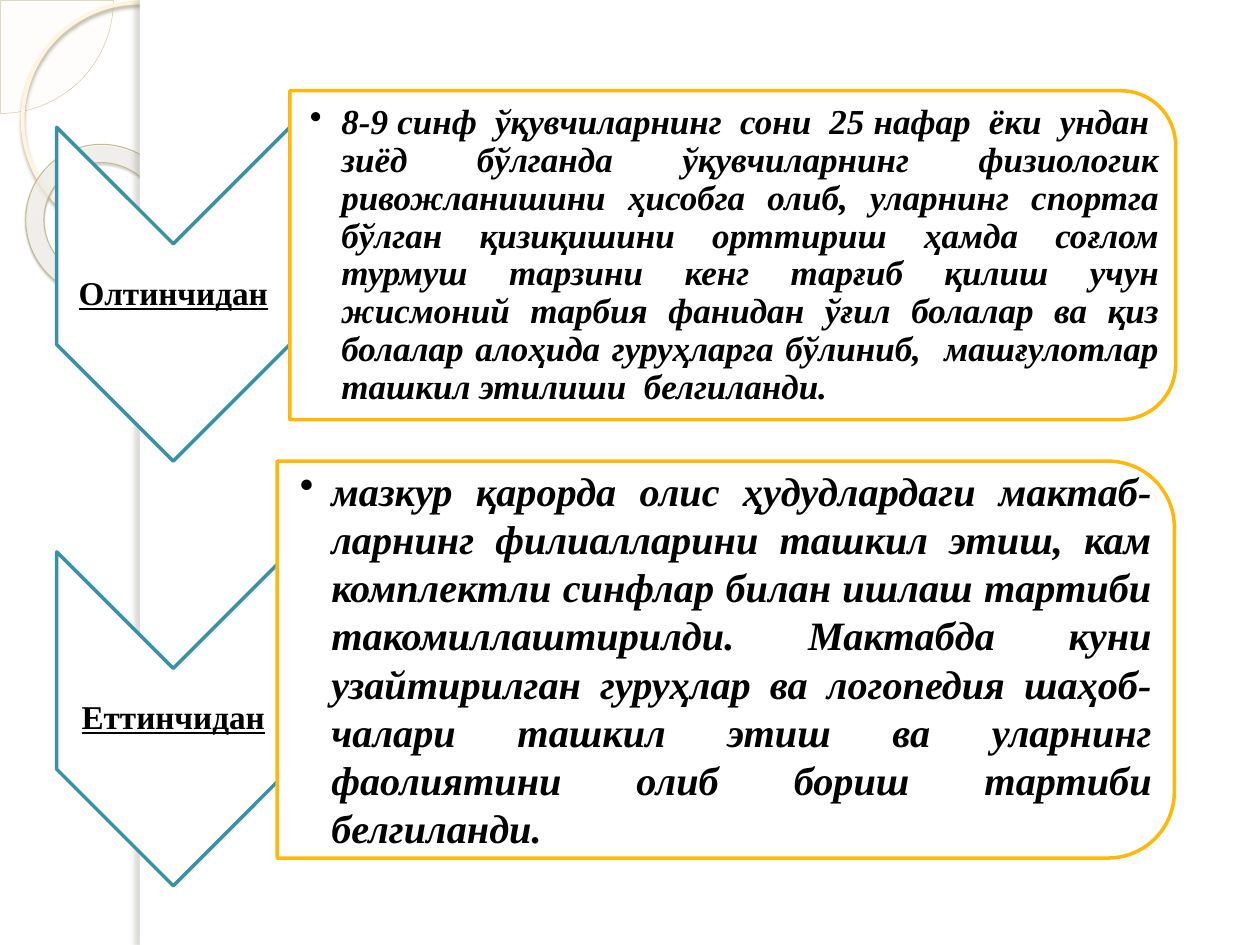
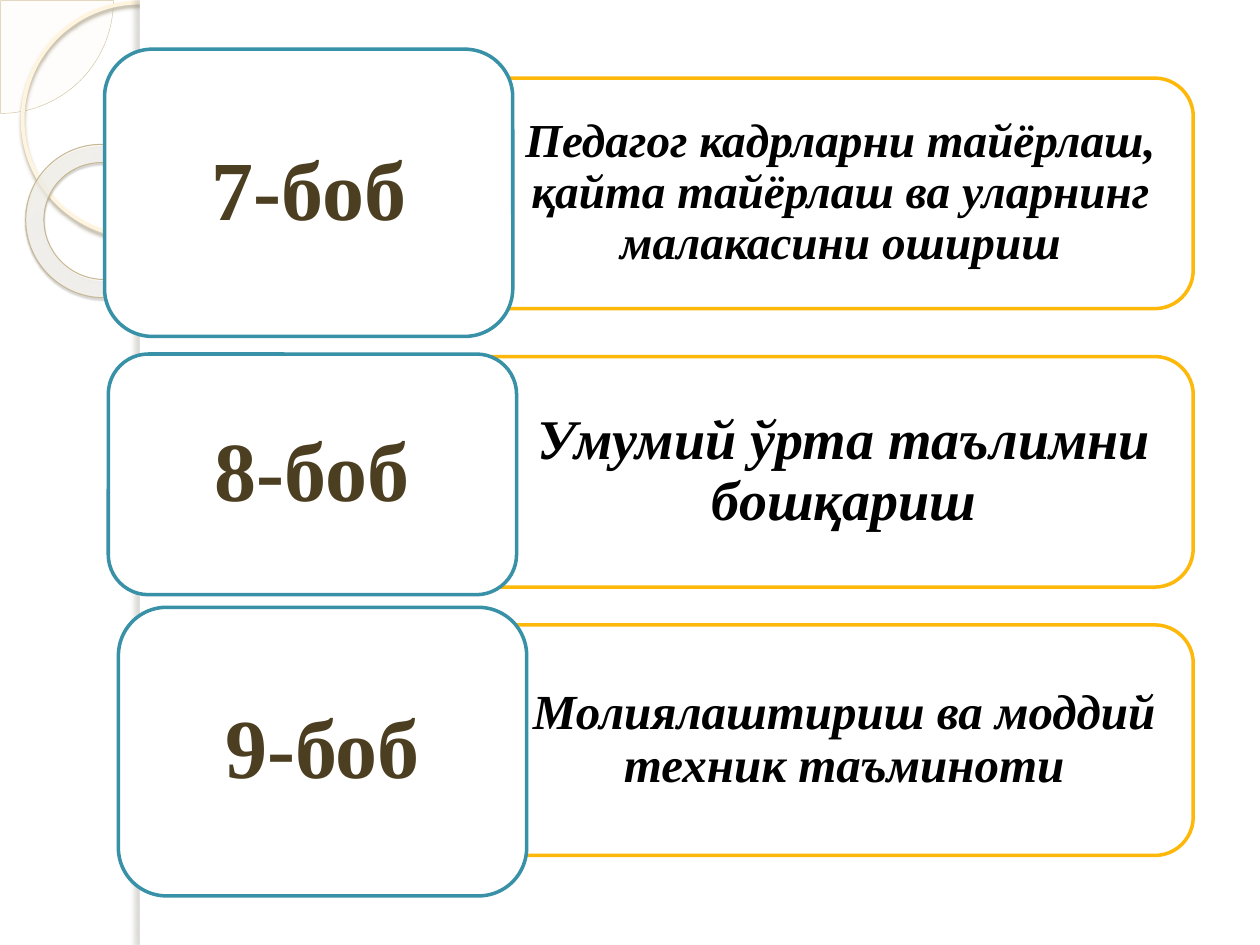
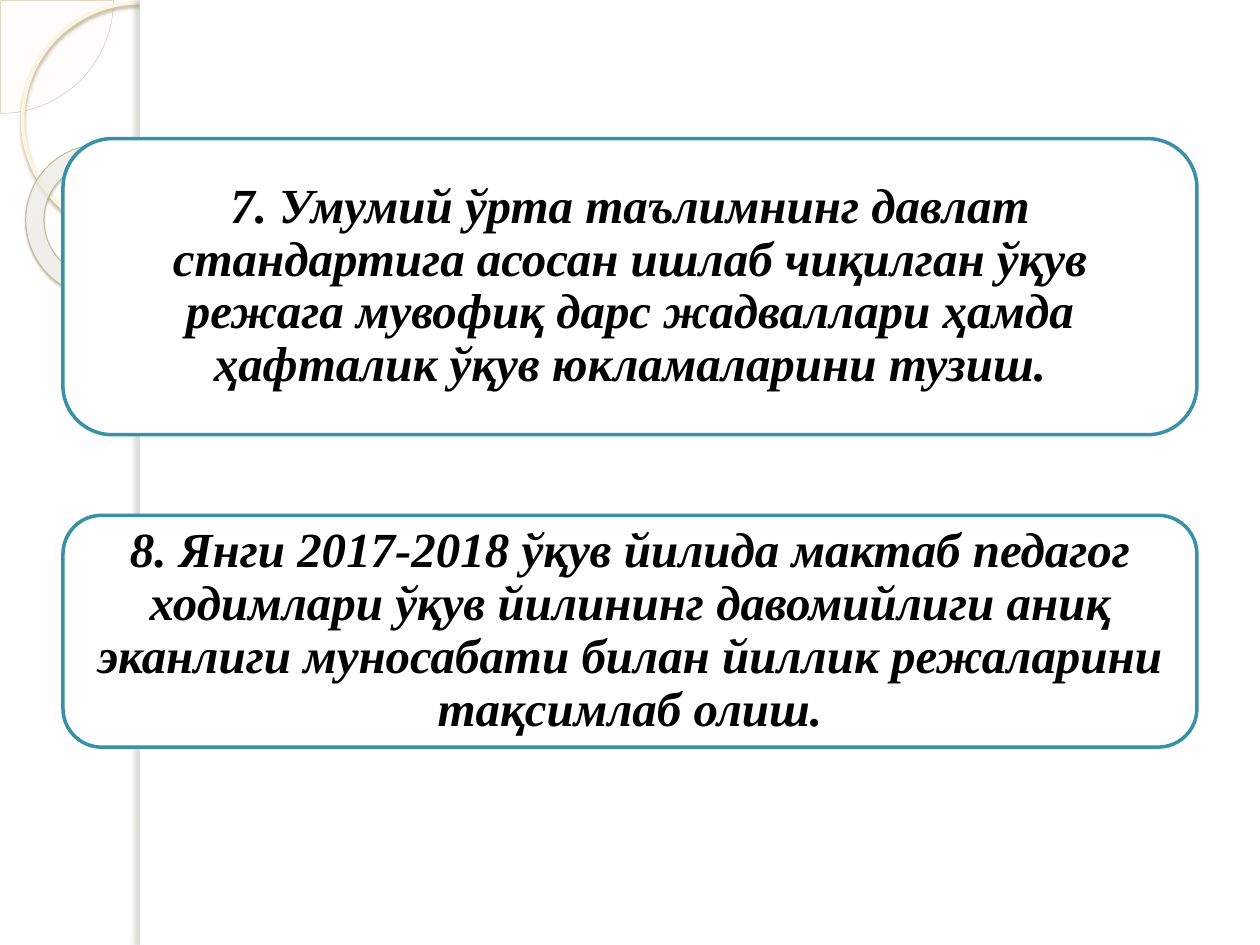
from lxml import etree
from pptx import Presentation
from pptx import util as u
from pptx.dml.color import RGBColor
from pptx.enum import shapes, text
from pptx.oxml import parse_xml
from pptx.oxml.ns import nsdecls, qn

FONT = "Times New Roman"
COLUMNS, ROWS = 100, 75
CELL = u.Inches(0.1)
WHITE, BLACK, BROWN = "FFFFFF", "000000", "4B3E21"
TEAL, AMBER = "3891A7", "FEB80A"
FORM = shapes.MSO_SHAPE
CENTER, JUSTIFY = text.PP_ALIGN.CENTER, text.PP_ALIGN.JUSTIFY


def color(code):
    """Turn a hex string into a colour."""
    return RGBColor.from_string(code)


def grid(*lengths):
    """Turn grid cells into slide lengths."""
    return [round(length * CELL) for length in lengths]


def add_form(page, form, area, fill=None, line=None, width=2, turn=0):
    """Add a preset shape with a flat fill and outline."""
    shape = page.shapes.add_shape(form, *grid(*area))
    shape.rotation = turn
    shape.shadow.inherit = False
    if fill:
        shape.fill.solid()
        shape.fill.fore_color.rgb = color(fill)
    else:
        shape.fill.background()
    if line:
        shape.line.color.rgb = color(line)
        shape.line.width = u.Pt(width)
    else:
        shape.line.fill.background()
    return shape


def add_upright(page, form, area, line):
    """Add a shape turned a quarter so that it covers the given area."""
    left, top, width, height = area
    shift = (width - height) / 2
    frame = (left + shift, top - shift, height, width)
    return add_form(page, form, frame, WHITE, line, turn=90)


def write(box, words, size, ink=BLACK, align=CENTER, italic=True, underline=False,
          spacing=0.9, insets=(0, 0), indent=0, bullet=False):
    """Write one formatted paragraph into a shape or text box."""
    frame = box.text_frame
    frame.word_wrap = True
    frame.vertical_anchor = text.MSO_ANCHOR.MIDDLE
    frame.margin_left, frame.margin_top = grid(*insets)
    frame.margin_right, frame.margin_bottom = grid(insets[-1] if bullet else insets[0], insets[1])
    para = frame.paragraphs[0]
    para.alignment = align
    para.line_spacing = spacing
    properties = para._p.get_or_add_pPr()
    properties.set("marL", str(grid(indent)[0]))
    properties.set("indent", str(grid(-indent if bullet else 0)[0]))
    if bullet:
        etree.SubElement(properties, qn("a:buChar"), char="•")
    span = para.add_run()
    span.text = words
    font = span.font
    font.name, font.size, font.bold = FONT, u.Pt(size), True
    font.italic, font.underline = italic, underline
    font.color.rgb = color(ink)


def add_text(page, area, words, size, **style):
    """Add a text box holding one paragraph."""
    write(page.shapes.add_textbox(*grid(*area)), words, size, **style)


def add_shadow(shape, code, alpha, blur, distance, angle):
    """Give a shape an outer shadow."""
    effects = shape._element.spPr.find(qn("a:effectLst"))
    effects.append(parse_xml(
        f'<a:outerShdw {nsdecls("a")} blurRad="{u.Pt(blur)}" dist="{u.Pt(distance)}" '
        f'dir="{angle * 60000}" algn="tl" rotWithShape="0"><a:srgbClr val="{code}">'
        f'<a:alpha val="{alpha * 1000}"/></a:srgbClr></a:outerShdw>'))


def fade(shape, stops):
    """Fill a shape with a translucent circular gradient."""
    marks = "".join(
        f'<a:gs pos="{place * 1000}"><a:srgbClr val="{code}">'
        f'<a:alpha val="{alpha * 1000}"/></a:srgbClr></a:gs>' for place, code, alpha in stops)
    gradient = parse_xml(
        f'<a:gradFill {nsdecls("a")}><a:gsLst>{marks}</a:gsLst><a:path path="circle">'
        '<a:fillToRect l="-408000" t="-50000" r="508000" b="150000"/></a:path></a:gradFill>')
    properties = shape._element.spPr
    properties.replace(properties.find(qn("a:noFill")), gradient)


def decorate(layout, page):
    """Draw the side band once and move it to the shared layout."""
    for holder in list(layout.placeholders):
        layout.shapes.element.remove(holder.element)
    pie = add_form(page, FORM.PIE, (-8.9, -8.9, 17.9, 17.9), "FEFAF4", "D3C39F", 0.25)
    pie.adjustments[0], pie.adjustments[1] = 0, 54
    tint = pie._element.spPr.find(qn("a:solidFill"))[0]
    etree.SubElement(tint, qn("a:alpha"), val="33000")
    ring = add_form(page, FORM.OVAL, (1.8, 0.2, 18.6, 18.6), line="FFF5DE", width=2.15)
    add_shadow(ring, "B0A68F", 85, 2, 2, 90)
    donut = add_form(page, FORM.DONUT, (2, 11.5, 12.3, 12.1), line="C7B893", width=0.58, turn=38.6)
    donut.adjustments[0] = 0.12
    fade(donut, [(0, "FFFCF6", 70), (70, "FFFEFB", 55), (100, "F0D28E", 60)])
    add_shadow(donut, "5A5444", 35, 1, 1.2, 75)
    panel = add_form(page, FORM.RECTANGLE, (11.1, 0, COLUMNS - 11.1, ROWS), WHITE)
    edge = add_form(page, FORM.RECTANGLE, (11.1, 0, 0.8, ROWS), WHITE)
    add_shadow(edge, "736F63", 25, 3, 3, 180)
    for shape in (pie, ring, donut, panel, edge):
        layout.shapes.element.append(shape.element)


def add_step(page, top, label, card, body, words, size, **style):
    """Add a labelled chevron with a bulleted card beside it."""
    add_upright(page, FORM.CHEVRON, (4.5, top, 18.5, 26.5), TEAL)
    add_text(page, (4.5, top + 9.3, 18.5, 7.9), label, 19,
             italic=False, underline=True, insets=(0.1, 0.1))
    add_upright(page, FORM.ROUND_2_SAME_RECTANGLE, card, AMBER)
    add_text(page, body, words, size, align=JUSTIFY, indent=2.5, bullet=True, **style)


def add_chapter(page, top, label, tab, words, size, indent):
    """Add a chapter title with its number tab on the left."""
    add_upright(page, FORM.ROUND_2_SAME_RECTANGLE, (37.1, top, 57.6, 18.3), AMBER)
    add_text(page, (37.1, top + 0.9, 56.7, 16.5), words, size, insets=(1.1, 0.6), indent=indent)
    number = add_form(page, FORM.ROUNDED_RECTANGLE, tab, WHITE, TEAL)
    write(number, label, 48, ink=BROWN, italic=False, insets=(2, 1))


def add_task(page, top, height, words):
    """Add a wide rounded card with centred text."""
    card = add_form(page, FORM.ROUNDED_RECTANGLE, (5, top, COLUMNS - 10, height), WHITE, TEAL)
    write(card, words, 28, insets=(1.2, 1.2))


def main():
    """Build the three slides."""
    deck = Presentation()
    deck.slide_width, deck.slide_height = grid(COLUMNS, ROWS)
    blank = deck.slide_layouts[6]
    steps, chapters, tasks = [deck.slides.add_slide(blank) for _ in range(3)]
    decorate(blank, steps)

    add_step(steps, 10.1, "Олтинчидан", (23, 7.2, 70.3, 26.1), (23, 8.5, 69.1, 23.6),
             "8-9 синф  ўқувчиларнинг  сони  25 нафар  ёки  ундан  зиёд  бўлганда  "
             "ўқувчиларнинг  физиологик ривожланишини ҳисобга олиб, уларнинг спортга "
             "бўлган қизиқишини орттириш ҳамда соғлом турмуш тарзини кенг тарғиб қилиш "
             "учун жисмоний тарбия фанидан ўғил болалар ва қиз болалар алоҳида "
             "гуруҳларга бўлиниб,  машғулотлар ташкил этилиши  белгиланди.",
             20, insets=(1.6, 0.1))
    add_step(steps, 43.8, "Еттинчидан", (22, 36.6, 71.2, 31.5), (22, 38.1, 69.7, 28.4),
             "мазкур қарорда олис ҳудудлардаги мактаб-ларнинг филиалларини ташкил этиш, "
             "кам комплектли синфлар билан ишлаш тартиби такомиллаштирилди. Мактабда "
             "куни узайтирилган гуруҳлар ва логопедия шаҳоб-чалари ташкил этиш ва "
             "уларнинг фаолиятини олиб бориш тартиби белгиланди.",
             23, spacing=1.0, insets=(1.8, 0.2))

    for chapter in (
        (6.2, "7-боб", (8.3, 3.9, 32.4, 22.8),
         "Педагог кадрларни тайёрлаш, қайта тайёрлаш ва уларнинг малакасини ошириш", 27, 2.5),
        (28.3, "8-боб", (8.6, 28.1, 32.4, 19.1), "Умумий ўрта таълимни бошқариш", 32, 3.1),
        (49.6, "9-боб", (9.4, 48.2, 32.4, 22.9),
         "Молиялаштириш ва моддий техник таъминоти", 28, 3.1),
    ):
        add_chapter(chapters, *chapter)

    add_task(tasks, 11, 23.5,
             "7. Умумий ўрта таълимнинг давлат стандартига асосан ишлаб чиқилган ўқув "
             "режага мувофиқ дарс жадваллари ҳамда ҳафталик ўқув юкламаларини тузиш.")
    add_task(tasks, 40.9, 18.4,
             "8. Янги 2017-2018 ўқув йилида мактаб педагог ходимлари ўқув йилининг "
             "давомийлиги аниқ эканлиги муносабати билан йиллик режаларини тақсимлаб олиш.")
    deck.save("out.pptx")


if __name__ == "__main__":
    main()
